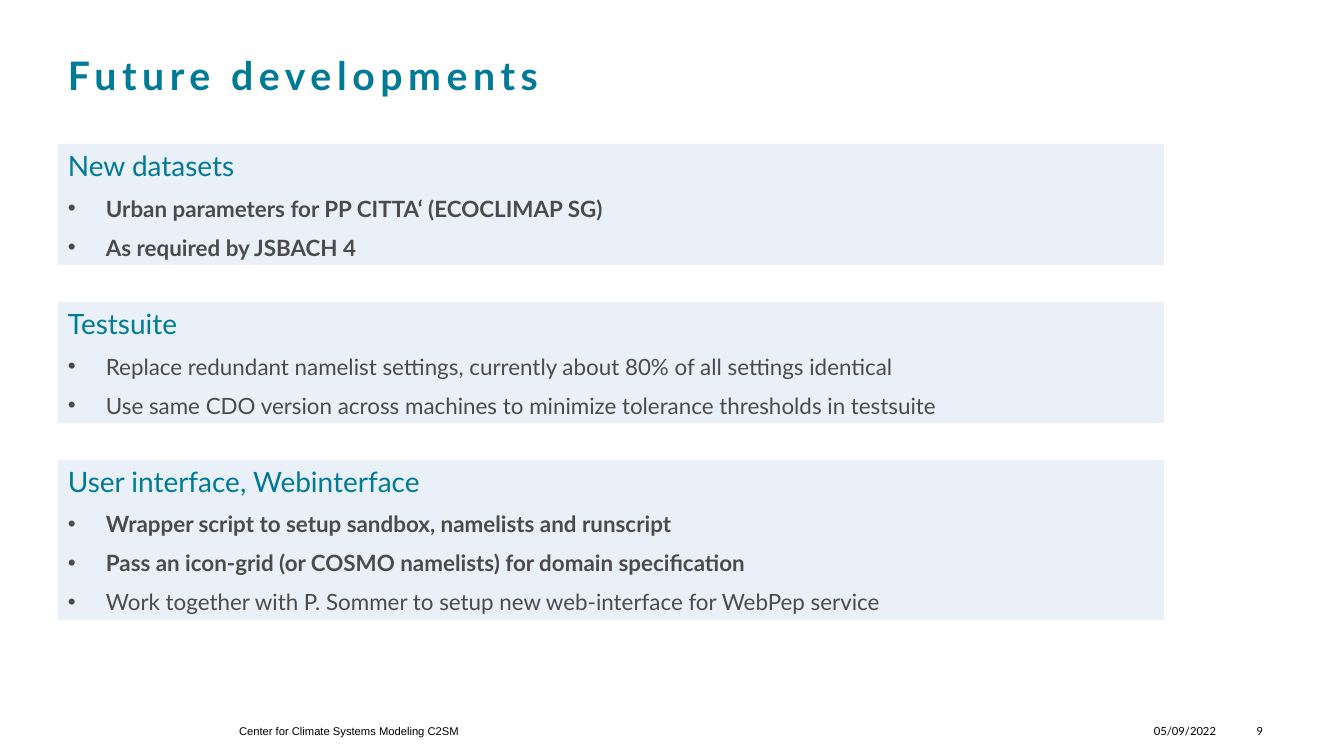
"""Build the slide on future developments."""
from lxml import etree
from pptx import Presentation, util as u
from pptx.dml.color import RGBColor
from pptx.enum import shapes, text
from pptx.oxml import ns

EMU_PER_PX = 914400 / 134.4
TEAL = RGBColor(0x00, 0x7A, 0x96)
GREY = RGBColor(0x4B, 0x4B, 0x4B)
BLACK = RGBColor(0x00, 0x00, 0x00)
PANEL_BLUE = RGBColor(0x72, 0x9F, 0xCF)

LEFT, WIDTH = 58, 1106
PANEL_TOP, PANEL_GAP = 144, 37
HEADING_HEIGHT, BULLET_HEIGHT = 43, 39
BULLET_INDENT = 38
FOOTER_TOP, FOOTER_HEIGHT = 719, 24

TOPICS = [
    ("New datasets", [
        ("Urban parameters for PP CITTA‘ (ECOCLIMAP SG)", True),
        ("As required by JSBACH 4", True),
    ]),
    ("Testsuite", [
        ("Replace redundant namelist settings, currently about 80% of all settings identical", False),
        ("Use same CDO version across machines to minimize tolerance thresholds in testsuite", False),
    ]),
    ("User interface, Webinterface", [
        ("Wrapper script to setup sandbox, namelists and runscript", True),
        ("Pass an icon-grid (or COSMO namelists) for domain specification", True),
        ("Work together with P. Sommer to setup new web-interface for WebPep service", False),
    ]),
]
FOOTERS = [
    ("Center for Climate Systems Modeling C2SM", 239, 595, "Arial", text.PP_ALIGN.LEFT),
    ("05/09/2022", 1154, 67, "Lato", text.PP_ALIGN.LEFT),
    ("9", 1228, 35, "Lato", text.PP_ALIGN.RIGHT),
]


def px(length):
    """Convert pixels to EMU."""
    return u.Emu(round(length * EMU_PER_PX))


def write(paragraph, words, size, color, font="Lato", bold=False):
    """Set the words of a paragraph and return their formatted run."""
    paragraph.text = words
    run = paragraph.runs[0]
    run.font.name = font
    run.font.size = u.Pt(size)
    run.font.bold = bold
    run.font.color.rgb = color
    return run


def set_frame(frame, side, end, anchor):
    """Wrap a text frame and set its margins and anchor."""
    frame.word_wrap = True
    frame.margin_left = frame.margin_right = px(side)
    frame.margin_top = frame.margin_bottom = px(end)
    frame.vertical_anchor = anchor


def add_title(slide, words):
    """Add the widely spaced slide title."""
    title = slide.shapes.add_textbox(px(LEFT), px(46), px(WIDTH), px(58))
    set_frame(title.text_frame, 10, 5, text.MSO_ANCHOR.TOP)
    run = write(title.text_frame.paragraphs[0], words, 21, TEAL, bold=True)
    run.font._element.set("spc", "300")


def add_bullet(frame, words, bold):
    """Add one bulleted line to a panel."""
    paragraph = frame.add_paragraph()
    paragraph.space_before = u.Pt(6.5)
    properties = paragraph._p.get_or_add_pPr()
    properties.set("marL", str(px(BULLET_INDENT)))
    properties.set("indent", str(-px(BULLET_INDENT)))
    etree.SubElement(properties, ns.qn("a:buFont")).set("typeface", "Arial")
    etree.SubElement(properties, ns.qn("a:buChar")).set("char", "•")
    write(paragraph, words, 12, GREY, bold=bold)


def add_panel(slide, top, heading, bullets):
    """Add a tinted topic panel and return its bottom edge."""
    height = HEADING_HEIGHT + BULLET_HEIGHT * len(bullets)
    panel = slide.shapes.add_shape(
        shapes.MSO_SHAPE.RECTANGLE, px(LEFT), px(top), px(WIDTH), px(height))
    panel.shadow.inherit = False
    panel.line.fill.background()
    panel.fill.solid()
    panel.fill.fore_color.rgb = PANEL_BLUE
    tint = panel._element.spPr.find(".//" + ns.qn("a:srgbClr"))
    etree.SubElement(tint, ns.qn("a:alpha")).set("val", "15000")
    frame = panel.text_frame
    set_frame(frame, 10, 5, text.MSO_ANCHOR.TOP)
    frame.auto_size = text.MSO_AUTO_SIZE.SHAPE_TO_FIT_TEXT
    write(frame.paragraphs[0], heading, 15, TEAL)
    for words, bold in bullets:
        add_bullet(frame, words, bold)
    for paragraph in frame.paragraphs:
        paragraph.alignment = text.PP_ALIGN.LEFT
    return top + height


def add_footer(slide, words, left, width, font, alignment):
    """Add one small text of the footer line."""
    footer = slide.shapes.add_textbox(px(left), px(FOOTER_TOP), px(width), px(FOOTER_HEIGHT))
    set_frame(footer.text_frame, 0, 0, text.MSO_ANCHOR.MIDDLE)
    paragraph = footer.text_frame.paragraphs[0]
    paragraph.alignment = alignment
    write(paragraph, words, 6, BLACK, font)


def main():
    """Build and save the slide."""
    deck = Presentation()
    deck.slide_width, deck.slide_height = px(1344), px(756)
    slide = deck.slides.add_slide(deck.slide_layouts[6])
    add_title(slide, "Future developments")
    top = PANEL_TOP
    for heading, bullets in TOPICS:
        top = add_panel(slide, top, heading, bullets) + PANEL_GAP
    for footer in FOOTERS:
        add_footer(slide, *footer)
    deck.save("out.pptx")


if __name__ == "__main__":
    main()
